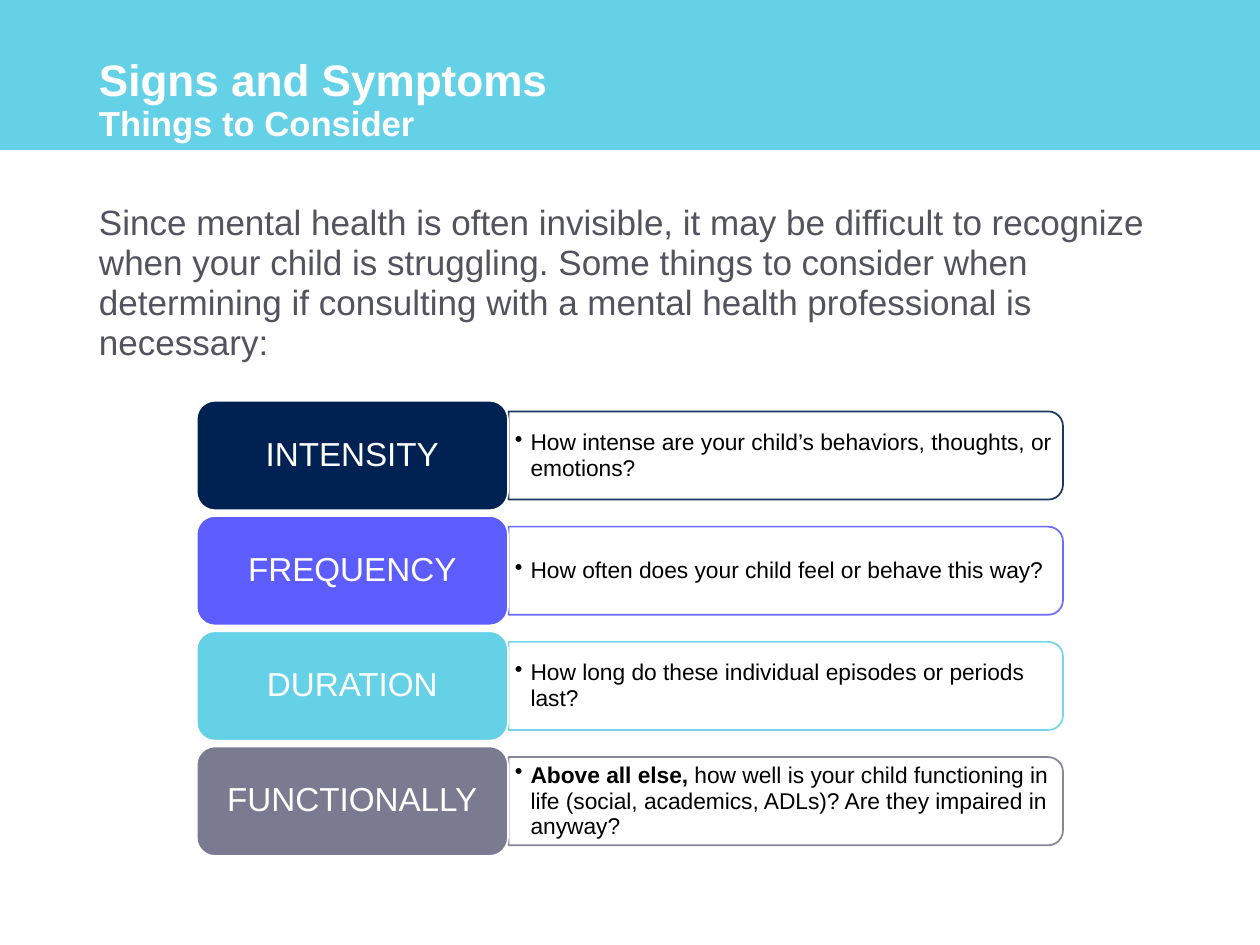
from lxml import etree
from pptx import Presentation
from pptx import util as u
from pptx.dml.color import RGBColor
from pptx.enum import shapes, text
from pptx.oxml.ns import qn

WHITE = RGBColor(0xFF, 0xFF, 0xFF)
BLACK = RGBColor(0x00, 0x00, 0x00)
GRAY = RGBColor(0x52, 0x53, 0x5C)
NAVY = RGBColor(0x00, 0x22, 0x52)
VIOLET = RGBColor(0x5C, 0x5C, 0xFF)
AQUA = RGBColor(0x64, 0xD1, 0xE7)
SLATE = RGBColor(0x7A, 0x7A, 0x90)

FIRST_ROW_CENTER, ROW_PITCH = 260.3, 65.85
LABEL_LEFT, LABEL_WIDTH, LABEL_HEIGHT = 112.4, 177.9, 62.6
PANEL_LEFT, PANEL_WIDTH, PANEL_HEIGHT = 290.6, 316.8, 50.4
QUESTION_WIDTH, QUESTION_HEIGHT = 313.9, 45.4

ROWS = [
    ("INTENSITY", NAVY,
     [("How intense are your child’s behaviors, thoughts, or emotions?", False)]),
    ("FREQUENCY", VIOLET,
     [("How often does your child feel or behave this way?", False)]),
    ("DURATION", AQUA,
     [("How long do these individual episodes or periods last?", False)]),
    ("FUNCTIONALLY", SLATE,
     [("Above all else, ", True),
      ("how well is your child functioning in life (social, academics, ADLs)? "
       "Are they impaired in anyway?", False)]),
]


def add_run(paragraph, words, *, size, color, bold=False, font="Arial"):
    run = paragraph.add_run()
    run.text = words
    run.font.name = font
    run.font.size = u.Pt(size)
    run.font.bold = bold
    run.font.color.rgb = color


class SlideBuilder:
    def __init__(self, slide):
        self.slide = slide

    def shape(self, kind, left, top, width, height, fill=None, line=None):
        shape = self.slide.shapes.add_shape(
            kind, u.Pt(left), u.Pt(top), u.Pt(width), u.Pt(height))
        shape.shadow.inherit = False
        if fill is None:
            shape.fill.background()
        else:
            shape.fill.solid()
            shape.fill.fore_color.rgb = fill
        if line is None:
            shape.line.fill.background()
        else:
            shape.line.color.rgb = line
            shape.line.width = u.Pt(1)
        return shape

    def textbox(self, left, top, width, height):
        return self.slide.shapes.add_textbox(
            u.Pt(left), u.Pt(top), u.Pt(width), u.Pt(height))

    def paragraph(self, shape, anchor, margins=(7.2, 3.6), spacing=0.9,
                  alignment=text.PP_ALIGN.LEFT):
        """Set up the text frame and return its first paragraph."""
        frame = shape.text_frame
        frame.word_wrap = True
        frame.vertical_anchor = anchor
        frame.margin_left = frame.margin_right = u.Pt(margins[0])
        frame.margin_top = frame.margin_bottom = u.Pt(margins[1])
        paragraph = frame.paragraphs[0]
        paragraph.line_spacing = spacing
        paragraph.alignment = alignment
        return paragraph

    def label(self, center, words, color):
        shape = self.shape(shapes.MSO_SHAPE.ROUNDED_RECTANGLE, LABEL_LEFT,
                           center - LABEL_HEIGHT / 2, LABEL_WIDTH, LABEL_HEIGHT,
                           fill=color, line=WHITE)
        paragraph = self.paragraph(shape, text.MSO_ANCHOR.MIDDLE,
                                   alignment=text.PP_ALIGN.CENTER)
        add_run(paragraph, words, size=19, color=WHITE)

    def panel(self, center, color):
        """Outline a panel whose rounded corners are turned to the right."""
        middle = PANEL_LEFT + PANEL_WIDTH / 2
        shape = self.shape(shapes.MSO_SHAPE.ROUND_2_SAME_RECTANGLE,
                           middle - PANEL_HEIGHT / 2, center - PANEL_WIDTH / 2,
                           PANEL_HEIGHT, PANEL_WIDTH, line=color)
        shape.rotation = 90
        line_color = shape.line._get_or_add_ln().find(".//" + qn("a:srgbClr"))
        etree.SubElement(line_color, qn("a:alpha"), val="90000")

    def question(self, center, parts):
        box = self.textbox(PANEL_LEFT, center - QUESTION_HEIGHT / 2,
                           QUESTION_WIDTH, QUESTION_HEIGHT)
        paragraph = self.paragraph(box, text.MSO_ANCHOR.MIDDLE,
                                   margins=(3.6, 2.2), spacing=0.95)
        properties = paragraph._p.get_or_add_pPr()
        properties.set("marL", str(u.Pt(9)))
        properties.set("indent", str(u.Pt(-9)))
        etree.SubElement(properties, qn("a:buChar"), char="•")
        for words, bold in parts:
            add_run(paragraph, words, size=13, color=BLACK, bold=bold)


def main():
    presentation = Presentation()
    presentation.slide_width, presentation.slide_height = u.Pt(720), u.Pt(540)
    builder = SlideBuilder(presentation.slides.add_slide(presentation.slide_layouts[6]))

    builder.shape(shapes.MSO_SHAPE.RECTANGLE, 0, 0, 720, 85.7, fill=AQUA)

    body = builder.paragraph(builder.textbox(49.5, 113, 621, 118),
                             text.MSO_ANCHOR.TOP, spacing=0.95)
    add_run(body, "Since mental health is often invisible, it may be difficult to "
            "recognize when your child is struggling. Some things to consider when "
            "determining if consulting with a mental health professional is "
            "necessary:", size=20, color=GRAY)

    title = builder.paragraph(builder.textbox(49.5, 28.8, 621, 56.9),
                              text.MSO_ANCHOR.BOTTOM)
    add_run(title, "Signs and Symptoms", size=25.2, color=WHITE, bold=True)
    title.add_line_break()
    add_run(title, "Things to Consider", size=19.8, color=WHITE, bold=True)

    for index, (name, color, parts) in enumerate(ROWS):
        center = FIRST_ROW_CENTER + index * ROW_PITCH
        builder.panel(center, color)
        builder.question(center, parts)
        builder.label(center, name, color)

    presentation.save("out.pptx")


if __name__ == "__main__":
    main()
